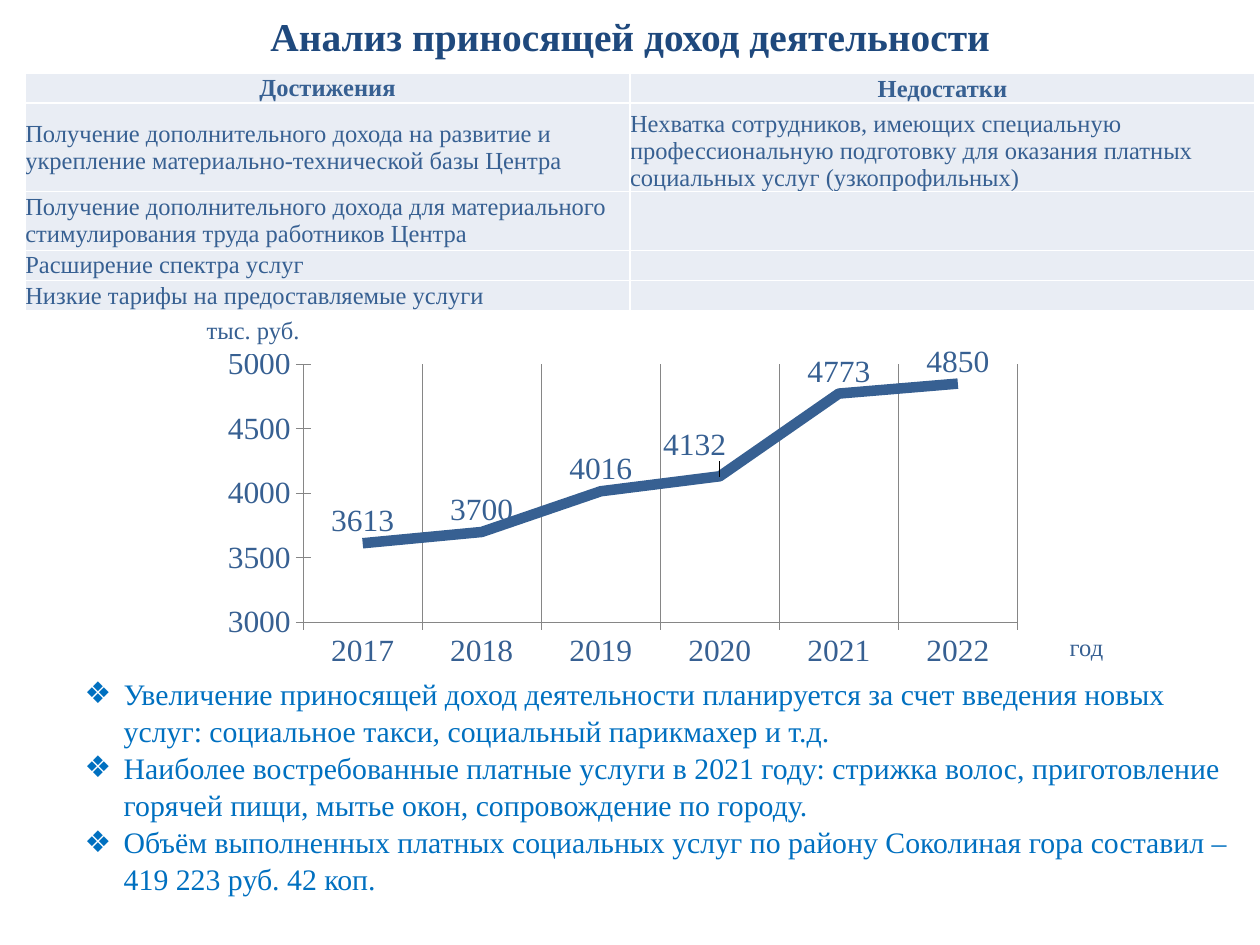
from dataclasses import dataclass

from lxml.etree import SubElement
from pptx import Presentation
from pptx.chart.data import CategoryChartData
from pptx.dml.color import RGBColor
from pptx.enum.chart import XL_CHART_TYPE, XL_LABEL_POSITION, XL_TICK_LABEL_POSITION, XL_TICK_MARK
from pptx.enum.text import MSO_ANCHOR, MSO_AUTO_SIZE, PP_ALIGN
from pptx.oxml import parse_xml
from pptx.oxml.ns import nsdecls, qn
from pptx.util import Cm, Pt


@dataclass
class Theme:
    face: str = "Times New Roman"
    title: str = "1F497D"
    main: str = "376092"
    list: str = "0070C0"
    cell: str = "E9EDF4"
    edge: str = "FFFFFF"
    axis: str = "868686"
    head_size: float = 22.5
    chart_size: float = 18
    list_size: float = 17
    cell_size: int = 14


class Deck:
    """Holds the theme and the slide being filled."""

    def __init__(self, theme):
        self.theme = theme
        self.prs = Presentation()
        self.prs.slide_width, self.prs.slide_height = Cm(25.4), Cm(19.05)
        self.slide = self.prs.slides.add_slide(self.prs.slide_layouts[1])

    def style(self, font, size, color, bold=False):
        font.name, font.size, font.bold = self.theme.face, Pt(size), bold
        font.color.rgb = RGBColor.from_string(color)

    def place(self, shape, box):
        shape.left, shape.top, shape.width, shape.height = map(Cm, box)

    def title(self, text, box):
        shape = self.slide.shapes.title
        self.place(shape, box)
        frame = shape.text_frame
        frame.text = text
        frame.vertical_anchor = MSO_ANCHOR.MIDDLE
        par = frame.paragraphs[0]
        par.alignment = PP_ALIGN.CENTER
        self.style(par.runs[0].font, self.theme.head_size, self.theme.title, True)

    def bullets(self, items, tail, box):
        """Bulleted items, then a tail line with the same indent and no bullet."""
        shape = self.slide.placeholders[1]
        self.place(shape, box)
        frame = shape.text_frame
        frame.text = "\n".join([*items, tail])
        frame.word_wrap = True
        frame.auto_size = MSO_AUTO_SIZE.SHAPE_TO_FIT_TEXT
        for i, par in enumerate(frame.paragraphs):
            par.space_before = Pt(0)
            par.line_spacing = 1.04
            marked = i < len(items)
            props = par._p.get_or_add_pPr()
            props.set("marL", str(Cm(0.79)))
            props.set("indent", str(Cm(-0.79 if marked else 0)))
            if marked:
                SubElement(props, qn("a:buChar")).set("char", "❖")
            else:
                SubElement(props, qn("a:buNone"))
            self.style(par.runs[0].font, self.theme.list_size, self.theme.list)

    def grid(self, rows, spot, widths, heights):
        left, top = map(Cm, spot)
        frame = self.slide.shapes.add_table(
            len(rows), len(widths), left, top, Cm(sum(widths)), Cm(sum(heights)))
        table = frame.table
        table.first_row = table.horz_banding = False
        for col, width in zip(table.columns, widths):
            col.width = Cm(width)
        for row, height in zip(table.rows, heights):
            row.height = Cm(height)
        for r, row in enumerate(rows):
            for c, text in enumerate(row):
                self.enter(table.cell(r, c), text)
        return table

    def enter(self, cell, text):
        par = cell.text_frame.paragraphs[0]
        if text:
            par.text = text
            self.style(par.runs[0].font, self.theme.cell_size, self.theme.main)
        else:
            end = SubElement(par._p, qn("a:endParaRPr"))
            end.set("sz", str(self.theme.cell_size * 100))

    def panel(self, rows, spot, widths, heights):
        """Filled table with white edges and a bold, centred first row."""
        table = self.grid(rows, spot, widths, heights)
        for cell in table.iter_cells():
            cell.margin_left = cell.margin_right = 0
            cell.margin_top = cell.margin_bottom = 0
            cell.vertical_anchor = MSO_ANCHOR.MIDDLE
            cell.fill.solid()
            cell.fill.fore_color.rgb = RGBColor.from_string(self.theme.cell)
            self.edges(cell)
        for r in (0, 1):
            table.cell(r, 1).vertical_anchor = MSO_ANCHOR.BOTTOM
        for cell in table.rows[0].cells:
            par = cell.text_frame.paragraphs[0]
            par.alignment = PP_ALIGN.CENTER
            par.runs[0].font.bold = True

    def edges(self, cell):
        props = cell._tc.get_or_add_tcPr()
        for i, side in enumerate("LRTB"):
            props.insert(i, parse_xml(
                f'<a:ln{side} {nsdecls("a")} w="{Pt(1)}"><a:solidFill>'
                f'<a:srgbClr val="{self.theme.edge}"/></a:solidFill></a:ln{side}>'))

    def label(self, text, spot, width, height):
        table = self.grid([[text]], spot, [width], [height])
        table.cell(0, 0).fill.background()

    def layout(self, **parts):
        tags = "".join(f'<c:{k} val="{v}"/>' for k, v in parts.items())
        return parse_xml(f'<c:layout {nsdecls("c")}><c:manualLayout>{tags}'
                         '</c:manualLayout></c:layout>')

    def chart(self, cats, vals, box):
        data = CategoryChartData()
        data.categories = cats
        data.add_series("Доход", vals)
        chart = self.slide.shapes.add_chart(
            XL_CHART_TYPE.LINE, *map(Cm, box), data).chart
        chart.has_legend = chart.has_title = False
        self.style(chart.font, self.theme.chart_size, self.theme.main)
        gray = RGBColor.from_string(self.theme.axis)
        across, up = chart.category_axis, chart.value_axis
        across.has_major_gridlines, up.has_major_gridlines = True, False
        across.major_gridlines.format.line.color.rgb = gray
        for axis in (across, up):
            axis.major_tick_mark = XL_TICK_MARK.CROSS
            axis.format.line.color.rgb = gray
        up.minimum_scale, up.maximum_scale, up.major_unit = 3000, 5000, 500
        up.tick_label_position = XL_TICK_LABEL_POSITION.LOW

        plot = chart.plots[0]
        plot.vary_by_categories = False
        line = plot.series[0]
        line.smooth = False
        line.format.line.width = Pt(6)
        line.format.line.color.rgb = RGBColor.from_string(self.theme.main)
        line.data_labels.show_value = True
        line.data_labels.position = XL_LABEL_POSITION.ABOVE
        # The 2020 label sits up and to the left, clear of the line
        line.points[3].data_label.position = XL_LABEL_POSITION.ABOVE
        moved = line.data_labels._element.find(qn("c:dLbl"))
        moved.insert(1, self.layout(x=-0.03, y=-0.03))

        area = chart._chartSpace.chart.plotArea
        for old in area.findall(qn("c:layout")):
            area.remove(old)
        area.insert(0, self.layout(layoutTarget="inner", xMode="edge", yMode="edge",
                                   x=0.13, y=0.04, w=0.85, h=0.81))


def main():
    deck = Deck(Theme())
    deck.title("Анализ приносящей доход деятельности", (0.51, 0.33, 24.41, 0.79))
    deck.panel([
        ("Достижения", "Недостатки"),
        ("Получение дополнительного дохода на развитие и укрепление "
         "материально-технической базы Центра",
         "Нехватка сотрудников, имеющих специальную профессиональную подготовку "
         "для оказания платных социальных услуг (узкопрофильных)"),
        ("Получение дополнительного дохода для материального стимулирования "
         "труда работников Центра", ""),
        ("Расширение спектра услуг", ""),
        ("Низкие тарифы на предоставляемые услуги", ""),
    ], (0.51, 1.47), (12.19, 12.6), (0.61, 1.65, 1.17, 0.61, 0.61))
    deck.chart([str(year) for year in range(2017, 2023)],
               (3613, 3700, 4016, 4132, 4773, 4850), (3.91, 6.96, 16.94, 6.55))
    deck.label("тыс. руб.", (3.91, 6.27), 2.46, 0.74)
    deck.label("год", (21.31, 12.67), 2.69, 0.79)
    deck.bullets([
        "Увеличение приносящей доход деятельности планируется за счет введения "
        "новых услуг: социальное такси, социальный парикмахер и т.д.",
        "Наиболее востребованные платные услуги в 2021 году: стрижка волос, "
        "приготовление горячей пищи, мытье окон, сопровождение по городу.",
        "Объём выполненных платных социальных услуг по району Соколиная гора составил –",
    ], "419 223 руб. 42 коп.", (1.45, 13.46, 24, 4.65))
    deck.prs.save("out.pptx")


if __name__ == "__main__":
    main()
